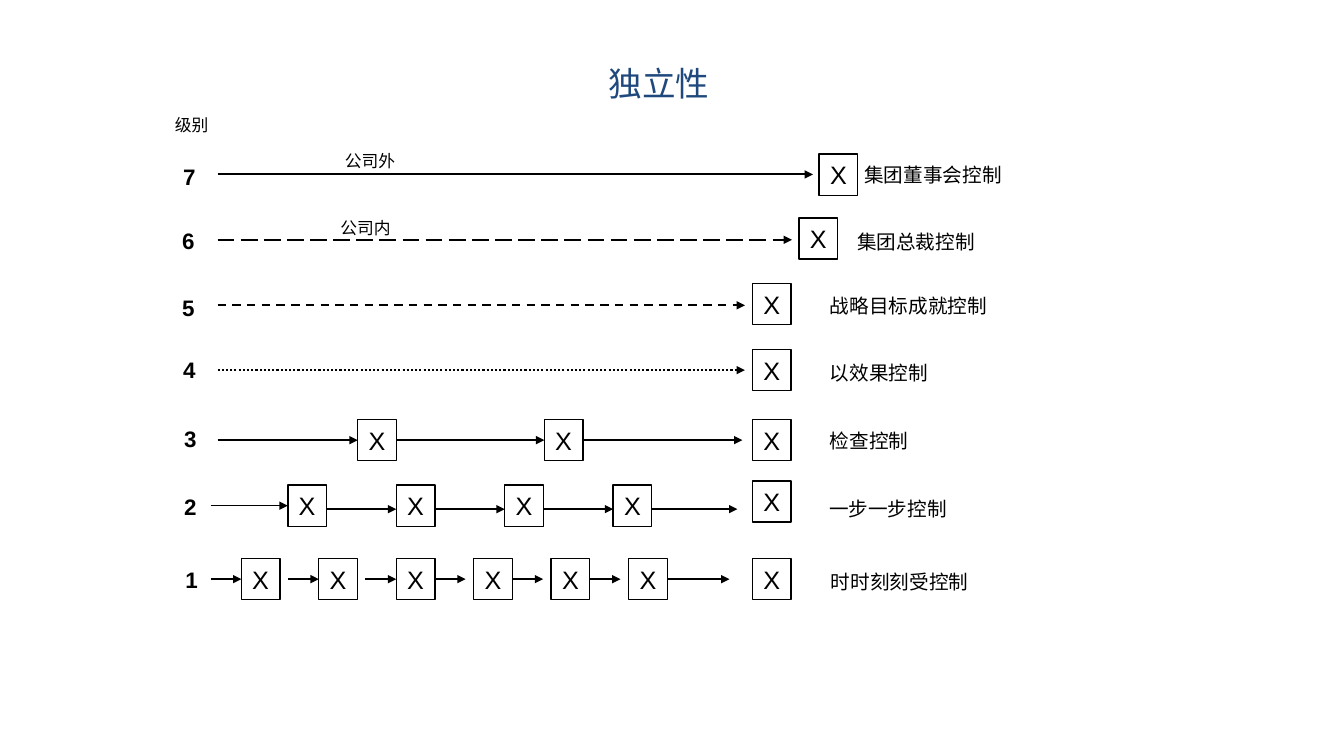
from dataclasses import dataclass

from lxml import etree
from pptx import Presentation
from pptx.dml.color import RGBColor
from pptx.enum import dml, shapes, text
from pptx.oxml import ns
from pptx.util import Pt


@dataclass(frozen=True)
class Theme:
    font: str = "Arial"
    ink: RGBColor = RGBColor(0, 0, 0)
    paper: RGBColor = RGBColor(255, 255, 255)
    title_color: RGBColor = RGBColor(0x1F, 0x49, 0x7D)
    title: float = 24
    mark: float = 18
    level: float = 16
    control: float = 14
    note: float = 12
    thin: float = 1
    thick: float = 1.5


THEME = Theme()
BOX_WIDTH, BOX_HEIGHT = 27.6, 29.4
LAST_BOX = 537.8
CENTER, LEFT = text.PP_ALIGN.CENTER, text.PP_ALIGN.LEFT
DASH = dml.MSO_LINE

# level, number left and top, control, its left and top
LEVELS = [
    ("7", 123.1, 112.6, "集团董事会控制", 610.6, 113),
    ("6", 122.4, 158.4, "集团总裁控制", 605.5, 160.6),
    ("5", 122.4, 206.6, "战略目标成就控制", 586.1, 206.6),
    ("4", 123.1, 251, "以效果控制", 586.1, 254.2),
    ("3", 123.8, 300, "检查控制", 586.1, 303.1),
    ("2", 123.8, 348.5, "一步一步控制", 585.4, 351.4),
    ("1", 124.6, 400.6, "时时刻刻受控制", 586.8, 403.2),
]
# box left and top, arrow end and height, dash
LONG_ARROWS = [
    (585.4, 110.1, 581, 124.6, None),
    (571, 155.6, 566, 171.3, DASH.LONG_DASH),
    (LAST_BOX, 202.5, 532.4, 218.1, DASH.DASH),
    (LAST_BOX, 249.6, 532.4, 264.4, DASH.ROUND_DOT),
]


def write(shape, words, size, align=CENTER, color=THEME.ink, bold=False):
    frame = shape.text_frame
    frame.text = words
    frame.vertical_anchor = text.MSO_ANCHOR.MIDDLE
    para = frame.paragraphs[0]
    para.alignment = align
    font = para.runs[0].font
    font.name, font.size, font.bold = THEME.font, Pt(size), bold
    font.color.rgb = color


def add_label(page, words, left, top, width, height, size, **style):
    label = page.shapes.add_textbox(Pt(left), Pt(top), Pt(width), Pt(height))
    label.text_frame.word_wrap = True
    write(label, words, size, **style)


def add_box(page, left, top):
    box = page.shapes.add_shape(
        shapes.MSO_SHAPE.RECTANGLE, Pt(left), Pt(top), Pt(BOX_WIDTH), Pt(BOX_HEIGHT)
    )
    box.shadow.inherit = False
    box.fill.solid()
    box.fill.fore_color.rgb = THEME.paper
    box.line.color.rgb = THEME.ink
    box.line.width = Pt(THEME.thin)
    write(box, "X", THEME.mark)
    box.text_frame.word_wrap = False
    return box


def add_arrow(page, start, end, y, width=THEME.thin, dash=None, source=None, target=None):
    """Draw a level arrow, joined to the source and target boxes if given."""
    arrow = page.shapes.add_connector(
        shapes.MSO_CONNECTOR.STRAIGHT, Pt(start), Pt(y), Pt(end), Pt(y)
    )
    arrow.line.color.rgb = THEME.ink
    arrow.line.width = Pt(width)
    if dash is not None:
        arrow.line.dash_style = dash
    properties = arrow.line._get_or_add_ln()
    etree.SubElement(properties, ns.qn("a:tailEnd"), type="triangle")
    etree.SubElement(arrow._element.spPr, ns.qn("a:effectLst"))
    if source is not None:
        arrow.begin_connect(source, 3)
    if target is not None:
        arrow.end_connect(target, 1)


def add_level_three(page):
    top = 299.7
    middle = top + BOX_HEIGHT / 2
    lefts = (255.7, 389)
    first, second = [add_box(page, left, top) for left in lefts]
    add_box(page, LAST_BOX, top)
    add_arrow(page, 155.5, lefts[0], middle, target=first)
    add_arrow(page, lefts[0] + BOX_WIDTH, lefts[1], middle, source=first, target=second)
    add_arrow(page, lefts[1] + BOX_WIDTH, 530.6, middle, source=second)


def add_level_two(page):
    top, low_line = 346.5, 363.7
    lefts = [205.7 + 77.5 * step for step in range(4)]
    boxes = [add_box(page, left, top) for left in lefts]
    add_box(page, LAST_BOX, 343.6)
    add_arrow(page, 150.5, lefts[0], top + BOX_HEIGHT / 2, target=boxes[0])
    for left, end in zip(lefts, lefts[1:] + [527]):
        add_arrow(page, left + BOX_WIDTH, end, low_line)


def add_level_one(page):
    top, short = 399, 22
    middle = top + BOX_HEIGHT / 2
    lefts = [172.5 + 55.35 * step for step in range(6)]
    boxes = [add_box(page, left, top) for left in lefts]
    add_box(page, LAST_BOX, top)
    for left, box in zip(lefts[:3], boxes):
        add_arrow(page, left - short, left, middle, target=box)
    for left, box in zip(lefts[2:], boxes[2:]):
        start = left + BOX_WIDTH
        end = 521.3 if box is boxes[-1] else start + short
        add_arrow(page, start, end, middle, source=box)


def main():
    deck = Presentation()
    deck.slide_width, deck.slide_height = Pt(960.5), Pt(540)
    page = deck.slides.add_slide(deck.slide_layouts[6])

    add_label(page, "独立性", 121, 21, 700, 76, THEME.title, color=THEME.title_color)
    add_label(page, "级别", 96, 80, 82, 19, THEME.note)
    add_label(page, "公司外", 236.5, 104, 56, 21.6, THEME.note)
    add_label(page, "公司内", 233.2, 152, 56, 21.6, THEME.note)

    for level, number_left, number_top, control, left, top in LEVELS:
        add_label(page, level, number_left, number_top, 24.5, 26.6, THEME.level, bold=True)
        add_label(page, control, left, top, 200, 24, THEME.control, align=LEFT)

    for left, top, end, y, dash in LONG_ARROWS:
        add_box(page, left, top)
        add_arrow(page, 155.5, end, y, THEME.thick, dash)

    add_level_three(page)
    add_level_two(page)
    add_level_one(page)
    deck.save("out.pptx")


if __name__ == "__main__":
    main()
